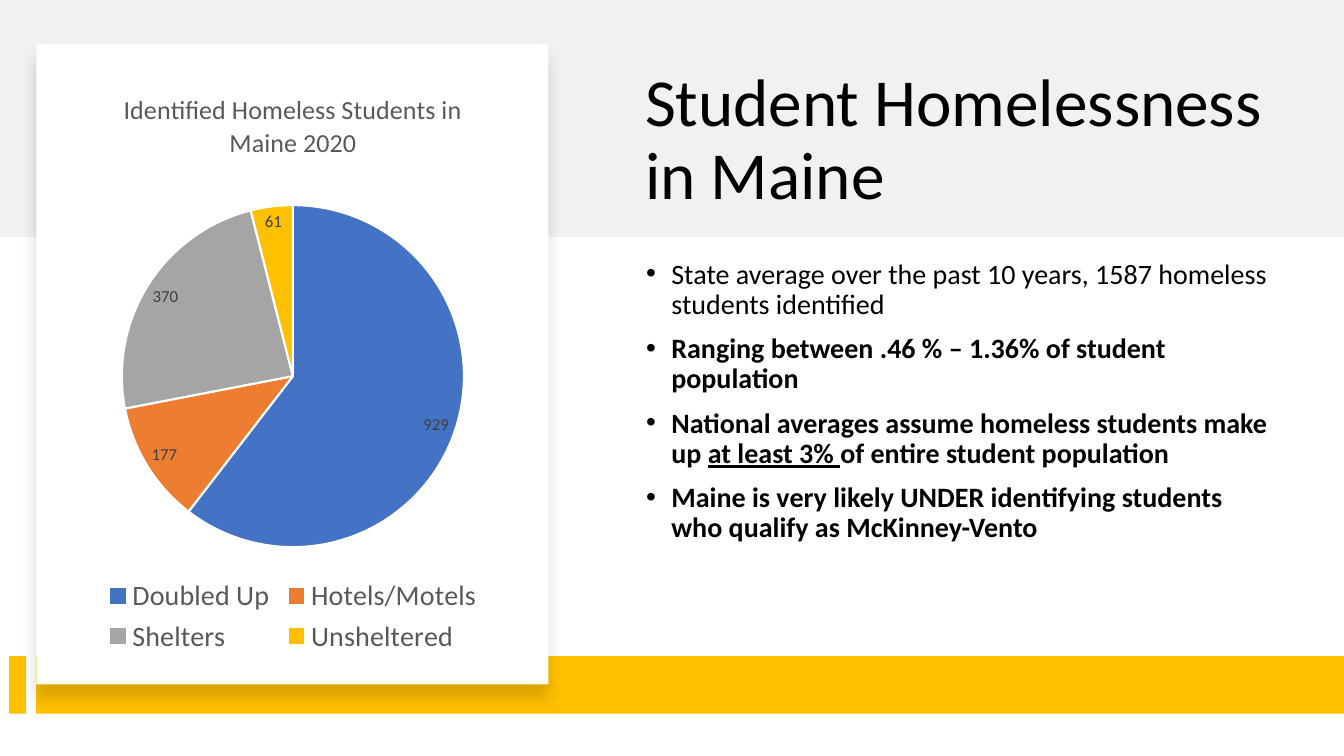
from dataclasses import dataclass

from lxml.etree import Element, SubElement
from pptx import Presentation
from pptx.chart.data import CategoryChartData
from pptx.dml.color import RGBColor
from pptx.enum.chart import XL_CHART_TYPE, XL_LABEL_POSITION, XL_LEGEND_POSITION
from pptx.enum.shapes import MSO_SHAPE
from pptx.enum.text import MSO_ANCHOR
from pptx.oxml.ns import qn
from pptx.shapes.autoshape import Shape
from pptx.slide import Slide
from pptx.util import Inches, Pt

SLIDE_WIDTH, SLIDE_HEIGHT = Inches(13.33), Inches(7.5)


@dataclass(frozen=True)
class Theme:
    font: str = "Calibri"
    ink: str = "000000"
    muted: str = "595959"
    label: str = "404040"
    paper: str = "FFFFFF"
    band: str = "D9D9D9"
    accent: str = "FFC000"
    slices: tuple[str, ...] = ("4472C4", "ED7D31", "A5A5A5", "FFC000")
    heading_size: float = 48
    bullet_size: float = 20
    chart_title_size: float = 18.6
    legend_size: float = 20
    label_size: float = 12


@dataclass(frozen=True)
class Area:
    """A box in percent of the slide's width and height."""
    left: float
    top: float
    width: float
    height: float

    def emu(self) -> tuple[int, int, int, int]:
        return (int(SLIDE_WIDTH * self.left / 100), int(SLIDE_HEIGHT * self.top / 100),
                int(SLIDE_WIDTH * self.width / 100), int(SLIDE_HEIGHT * self.height / 100))


@dataclass(frozen=True)
class Panel:
    area: Area
    color: str
    opacity: int = 100
    raised: bool = False


@dataclass(frozen=True)
class Phrase:
    text: str
    bold: bool = True
    underline: bool = False


THEME = Theme()
PANELS = (
    Panel(Area(0, 0, 100, 31.33), THEME.band, opacity=35),
    Panel(Area(0.67, 86.8, 1.28, 7.6), THEME.accent),
    Panel(Area(2.7, 86.8, 97.3, 7.6), THEME.accent),
    Panel(Area(2.7, 5.87, 38.11, 84.67), THEME.paper, raised=True),
)
HEADING_AREA = Area(47.26, 5.07, 47.94, 23.87)
FACTS_AREA = Area(47.34, 33.73, 47.86, 48.67)
CHART_AREA = Area(4.43, 9.2, 34.73, 78)
PIE_LAYOUT = {"x": 0.13, "y": 0.23, "w": 0.74, "h": 0.58}

HEADING = "Student Homelessness in Maine"
FACTS = (
    (Phrase("State average over the past 10 years, 1587 homeless students identified",
            bold=False),),
    (Phrase("Ranging between .46 % – 1.36% of student population"),),
    (Phrase("National averages assume homeless students make up "),
     Phrase("at least 3% ", underline=True),
     Phrase("of entire student population")),
    (Phrase("Maine is very likely UNDER identifying students who qualify as McKinney-Vento"),),
)
CHART_TITLE = "Identified Homeless Students in Maine 2020"
STUDENTS = {"Doubled Up": 929, "Hotels/Motels": 177, "Shelters": 370, "Unsheltered": 61}


def style_font(font, size: float, color: str, bold: bool = False) -> None:
    font.name, font.size, font.bold = THEME.font, Pt(size), bold
    font.color.rgb = RGBColor.from_string(color)


def add_panel(slide: Slide, panel: Panel) -> None:
    shape = slide.shapes.add_shape(MSO_SHAPE.RECTANGLE, *panel.area.emu())
    shape.shadow.inherit = False
    shape.fill.solid()
    shape.fill.fore_color.rgb = RGBColor.from_string(panel.color)
    shape.line.fill.background()
    properties = shape.element.spPr
    if panel.opacity < 100:
        fill_color = properties.find(f"{qn('a:solidFill')}/{qn('a:srgbClr')}")
        SubElement(fill_color, qn("a:alpha"), val=str(panel.opacity * 1000))
    if panel.raised:
        shadow = SubElement(properties.find(qn("a:effectLst")), qn("a:outerShdw"),
                            blurRad=str(Pt(11)), dist=str(Pt(10)), dir="5400000",
                            algn="t", rotWithShape="0")
        shadow_color = SubElement(shadow, qn("a:srgbClr"), val=THEME.ink)
        SubElement(shadow_color, qn("a:alpha"), val="15000")


def add_text_area(slide: Slide, area: Area, anchor: MSO_ANCHOR) -> Shape:
    box = slide.shapes.add_textbox(*area.emu())
    box.text_frame.word_wrap = True
    box.text_frame.vertical_anchor = anchor
    return box


def add_heading(slide: Slide) -> None:
    frame = add_text_area(slide, HEADING_AREA, MSO_ANCHOR.BOTTOM).text_frame
    frame.text = HEADING
    paragraph = frame.paragraphs[0]
    paragraph.line_spacing = 0.9
    style_font(paragraph.runs[0].font, THEME.heading_size, THEME.ink)


def add_facts(slide: Slide) -> None:
    frame = add_text_area(slide, FACTS_AREA, MSO_ANCHOR.TOP).text_frame
    for index, phrases in enumerate(FACTS):
        paragraph = frame.add_paragraph() if index else frame.paragraphs[0]
        paragraph.line_spacing = 0.9
        paragraph.space_before = Pt(10)
        properties = paragraph._p.get_or_add_pPr()
        properties.set("marL", str(Inches(0.25)))
        properties.set("indent", str(-Inches(0.25)))
        SubElement(properties, qn("a:buFont"), typeface="Arial")
        SubElement(properties, qn("a:buChar"), char="•")
        for phrase in phrases:
            run = paragraph.add_run()
            run.text = phrase.text
            style_font(run.font, THEME.bullet_size, THEME.ink, phrase.bold)
            run.font.underline = phrase.underline


def place_pie(chart) -> None:
    """Fix the pie's place as shares of the chart area."""
    plot_area = chart.element.find(f".//{qn('c:plotArea')}")
    for old_layout in plot_area.findall(qn("c:layout")):
        plot_area.remove(old_layout)
    layout = Element(qn("c:layout"))
    plot_area.insert(0, layout)
    manual = SubElement(layout, qn("c:manualLayout"))
    SubElement(manual, qn("c:layoutTarget"), val="inner")
    for side in ("x", "y"):
        SubElement(manual, qn(f"c:{side}Mode"), val="edge")
    for side, share in PIE_LAYOUT.items():
        SubElement(manual, qn(f"c:{side}"), val=str(share))


def add_student_chart(slide: Slide) -> None:
    data = CategoryChartData()
    data.categories = list(STUDENTS)
    data.add_series(CHART_TITLE, list(STUDENTS.values()))
    chart = slide.shapes.add_chart(XL_CHART_TYPE.PIE, *CHART_AREA.emu(), data).chart
    style_font(chart.font, 10, THEME.ink)

    chart.has_title = True
    chart.chart_title.include_in_layout = False
    title = chart.chart_title.text_frame
    title.text = CHART_TITLE
    style_font(title.paragraphs[0].runs[0].font, THEME.chart_title_size, THEME.muted)

    chart.has_legend = True
    chart.legend.position = XL_LEGEND_POSITION.BOTTOM
    chart.legend.include_in_layout = False
    style_font(chart.legend.font, THEME.legend_size, THEME.muted)

    pie = chart.plots[0]
    pie.vary_by_categories = True
    for index, color in enumerate(THEME.slices):
        wedge = pie.series[0].points[index].format
        wedge.fill.solid()
        wedge.fill.fore_color.rgb = RGBColor.from_string(color)
        wedge.line.color.rgb = RGBColor.from_string(THEME.paper)
        wedge.line.width = Pt(1.5)
    labels = pie.series[0].data_labels
    labels.show_value = True
    labels.position = XL_LABEL_POSITION.BEST_FIT
    style_font(labels.font, THEME.label_size, THEME.label)
    place_pie(chart)


def main() -> None:
    presentation = Presentation()
    presentation.slide_width, presentation.slide_height = SLIDE_WIDTH, SLIDE_HEIGHT
    slide = presentation.slides.add_slide(presentation.slide_layouts[6])
    for panel in PANELS:
        add_panel(slide, panel)
    add_heading(slide)
    add_facts(slide)
    add_student_chart(slide)
    presentation.save("out.pptx")


if __name__ == "__main__":
    main()
